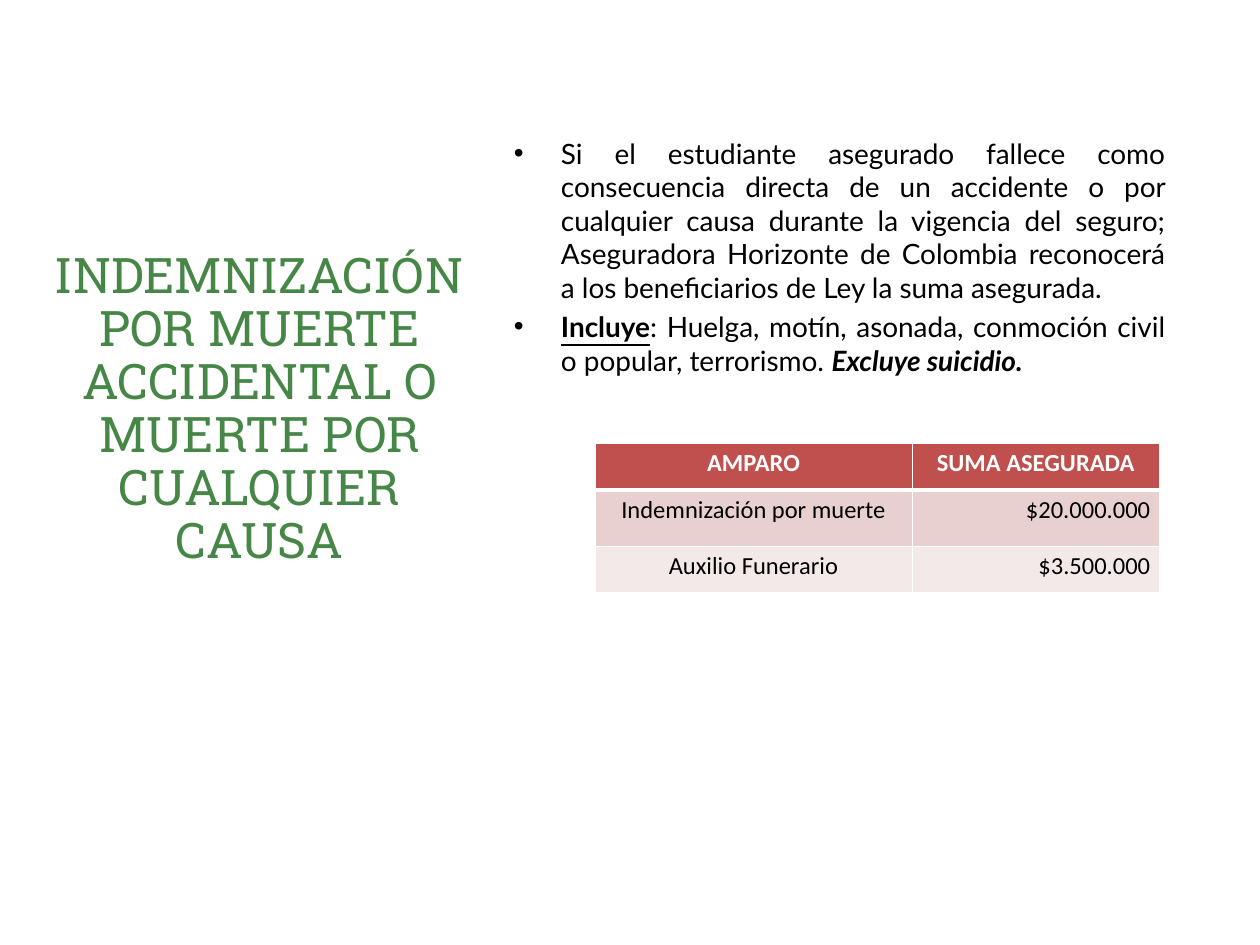
from lxml import etree
from pptx import Presentation
from pptx.dml.color import RGBColor
from pptx.enum.text import MSO_ANCHOR, PP_ALIGN
from pptx.oxml.ns import qn
from pptx.util import Cm, Pt

CENTER, RIGHT, JUSTIFY = PP_ALIGN.CENTER, PP_ALIGN.RIGHT, PP_ALIGN.JUSTIFY
MIDDLE = MSO_ANCHOR.MIDDLE
COLORS = {
    "title": "468646",
    "text": "000000",
    "white": "FFFFFF",
    "header": "C0504D",
    "dark_band": "E8D0D0",
    "light_band": "F4E9E9",
}


def add_text(paragraph, text, font="Lato", size=16, color="text",
             bold=False, italic=False, underline=False):
    run = paragraph.add_run()
    run.text = text
    run.font.name = font
    run.font.size = Pt(size)
    run.font.color.rgb = RGBColor.from_string(COLORS[color])
    run.font.bold = bold
    run.font.italic = italic
    run.font.underline = underline


def add_border(cell, side, width):
    properties = cell._tc.get_or_add_tcPr()
    line = etree.SubElement(properties, qn(f"a:ln{side}"), w=str(Pt(width)))
    fill = etree.SubElement(line, qn("a:solidFill"))
    etree.SubElement(fill, qn("a:srgbClr"), val=COLORS["white"])


presentation = Presentation()
presentation.slide_width = Cm(25.4)
presentation.slide_height = Cm(19.05)
slide = presentation.slides.add_slide(presentation.slide_layouts[6])

body = slide.shapes.add_textbox(Cm(10.11), Cm(2.62), Cm(13.64), Cm(5.28))
body_frame = body.text_frame
body_frame.word_wrap = True
bullets = [
    [("Si el estudiante asegurado fallece como consecuencia directa de un "
      "accidente o por cualquier causa durante la vigencia del seguro; "
      "Aseguradora Horizonte de Colombia reconocerá a los beneficiarios "
      "de Ley la suma asegurada.", {})],
    [("Incluye", {"bold": True, "underline": True}),
     (": Huelga, motín, asonada, conmoción civil o popular, terrorismo. ", {}),
     ("Excluye suicidio.", {"bold": True, "italic": True})],
]
for index, runs in enumerate(bullets):
    paragraph = body_frame.add_paragraph() if index else body_frame.paragraphs[0]
    properties = paragraph._p.get_or_add_pPr()
    properties.set("marL", str(Cm(0.95)))
    properties.set("indent", str(-Cm(0.95)))
    etree.SubElement(properties, qn("a:buFont"), typeface="Arial")
    etree.SubElement(properties, qn("a:buChar"), char="•")
    paragraph.alignment = JUSTIFY
    if index:
        paragraph.space_before = Pt(3.2)
    for text, text_format in runs:
        add_text(paragraph, text, **text_format)

title = slide.shapes.add_textbox(Cm(0.71), Cm(4.55), Cm(9.04), Cm(7.44))
title_frame = title.text_frame
title_frame.word_wrap = True
title_frame.vertical_anchor = MIDDLE
paragraph = title_frame.paragraphs[0]
paragraph.alignment = CENTER
paragraph.line_spacing = 0.9
add_text(paragraph, "INDEMNIZACIÓN POR MUERTE ACCIDENTAL O MUERTE POR CUALQUIER CAUSA",
         font="Roboto Slab", size=28, color="title")

rows = [
    ("AMPARO", "SUMA ASEGURADA"),
    ("Indemnización por muerte", "$20.000.000"),
    ("Auxilio Funerario", "$3.500.000"),
]
row_heights = [0.94, 1.14, 0.94]
row_fills = ["header", "dark_band", "light_band"]
column_widths = [6.4, 4.98]
table = slide.shapes.add_table(
    len(rows), len(column_widths), Cm(11.99), Cm(8.94),
    Cm(sum(column_widths)), Cm(sum(row_heights))).table
for column, width in zip(table.columns, column_widths):
    column.width = Cm(width)
for row_index, row in enumerate(rows):
    table.rows[row_index].height = Cm(row_heights[row_index])
    is_header = row_index == 0
    for column_index, text in enumerate(row):
        cell = table.cell(row_index, column_index)
        cell.margin_left = cell.margin_right = Cm(0.18)
        cell.margin_top = cell.margin_bottom = Cm(0.1)
        for side in "LRTB":
            under_header = (row_index, side) in [(0, "B"), (1, "T")]
            add_border(cell, side, 3 if under_header else 1)
        cell.fill.solid()
        cell.fill.fore_color.rgb = RGBColor.from_string(COLORS[row_fills[row_index]])
        paragraph = cell.text_frame.paragraphs[0]
        paragraph.alignment = CENTER if is_header or column_index == 0 else RIGHT
        add_text(paragraph, text, font="Calibri", size=14, bold=is_header,
                 color="white" if is_header else "text")

presentation.save("out.pptx")
